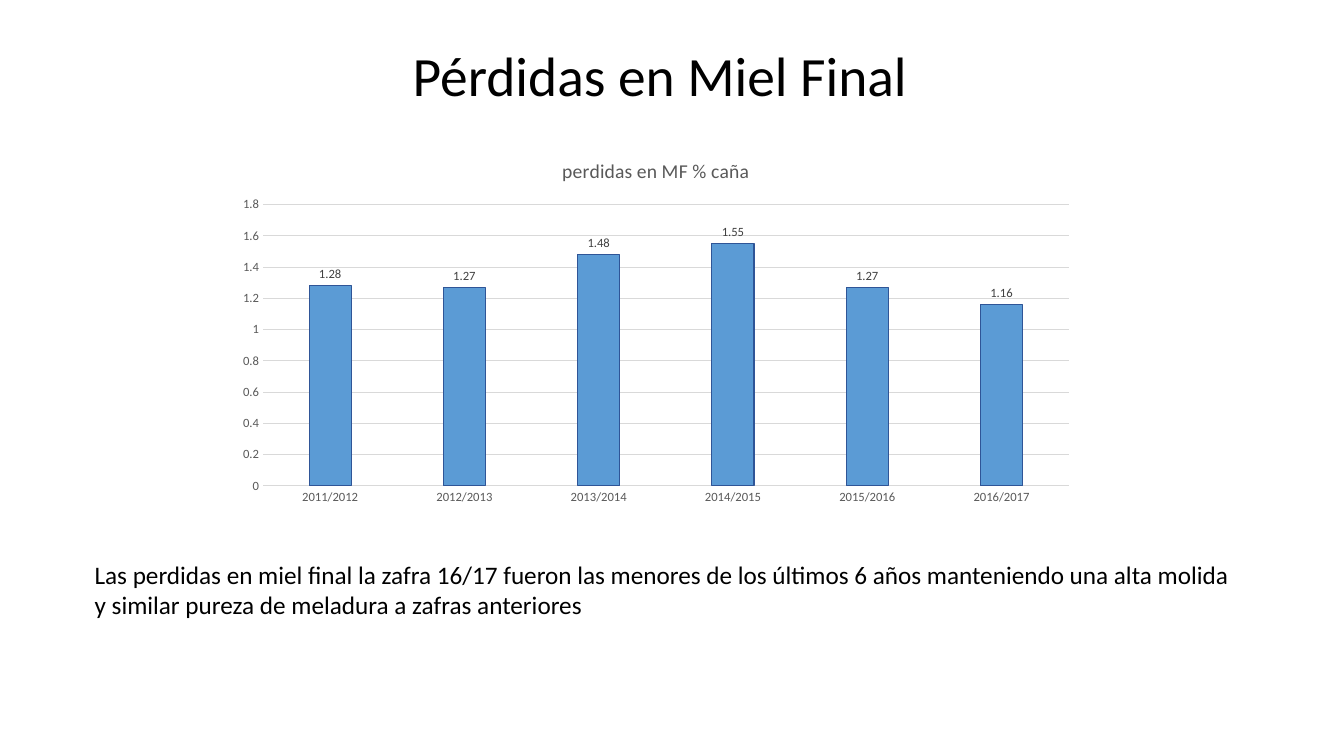
from pptx import Presentation
from pptx.chart.data import CategoryChartData
from pptx.dml.color import RGBColor
from pptx.enum.chart import XL_CHART_TYPE, XL_LABEL_POSITION, XL_TICK_MARK
from pptx.enum.text import MSO_ANCHOR, MSO_AUTO_SIZE, PP_ALIGN
from pptx.util import Inches, Pt

COLUMN_CLUSTERED = XL_CHART_TYPE.COLUMN_CLUSTERED
OUTSIDE_END = XL_LABEL_POSITION.OUTSIDE_END
NO_TICK = XL_TICK_MARK.NONE
MIDDLE = MSO_ANCHOR.MIDDLE
NO_AUTOFIT = MSO_AUTO_SIZE.NONE
GROW = MSO_AUTO_SIZE.SHAPE_TO_FIT_TEXT
CENTER = PP_ALIGN.CENTER

BLACK = RGBColor(0x00, 0x00, 0x00)
GRAY = RGBColor(0x59, 0x59, 0x59)
DARK_GRAY = RGBColor(0x40, 0x40, 0x40)
GRID_GRAY = RGBColor(0xD9, 0xD9, 0xD9)
BAR_BLUE = RGBColor(0x5B, 0x9B, 0xD5)
BORDER_BLUE = RGBColor(0x2F, 0x55, 0x97)

LOSSES = {
    "2011/2012": 1.28,
    "2012/2013": 1.27,
    "2013/2014": 1.48,
    "2014/2015": 1.55,
    "2015/2016": 1.27,
    "2016/2017": 1.16,
}


class SlideBuilder:
    """Hold the style and current slide, and add each kind of element."""

    font_name = "Calibri"
    line_width = Pt(0.75)

    def __init__(self, slide):
        self.slide = slide

    def style_font(self, font, size, color):
        font.name = self.font_name
        font.size = Pt(size)
        font.bold = False
        font.color.rgb = color

    def style_line(self, line, color):
        line.color.rgb = color
        line.width = self.line_width

    def add_title(self, text, left, top, width, height):
        title = self.slide.shapes.title
        title.left, title.top = Inches(left), Inches(top)
        title.width, title.height = Inches(width), Inches(height)
        frame = title.text_frame
        frame.text = text
        frame.auto_size = NO_AUTOFIT
        frame.vertical_anchor = MIDDLE
        frame.margin_right = Inches(0.35)
        paragraph = frame.paragraphs[0]
        paragraph.alignment = CENTER
        paragraph.line_spacing = 0.9
        self.style_font(paragraph.runs[0].font, 39.6, BLACK)

    def add_text(self, text, left, top, width, height):
        shape = self.slide.shapes.add_textbox(
            Inches(left), Inches(top), Inches(width), Inches(height))
        frame = shape.text_frame
        frame.word_wrap = True
        frame.auto_size = GROW
        frame.text = text
        self.style_font(frame.paragraphs[0].runs[0].font, 18, BLACK)

    def add_column_chart(self, name, values, left, top, width, height):
        data = CategoryChartData()
        data.categories = list(values)
        data.add_series(name, list(values.values()))
        chart = self.slide.shapes.add_chart(
            COLUMN_CLUSTERED, Inches(left), Inches(top),
            Inches(width), Inches(height), data).chart
        self.style_font(chart.font, 10, BLACK)
        chart.has_legend = False
        chart.has_title = True
        chart.chart_title.include_in_layout = False
        title_frame = chart.chart_title.text_frame
        title_frame.text = name
        self.style_font(title_frame.paragraphs[0].runs[0].font, 14, GRAY)
        self.style_axes(chart)
        self.style_columns(chart.plots[0])

    def style_axes(self, chart):
        for axis in (chart.category_axis, chart.value_axis):
            axis.major_tick_mark = NO_TICK
            axis.minor_tick_mark = NO_TICK
            self.style_font(axis.tick_labels.font, 9, GRAY)
        self.style_line(chart.category_axis.format.line, GRID_GRAY)
        value_axis = chart.value_axis
        value_axis.minimum_scale = 0
        value_axis.maximum_scale = 1.8
        value_axis.major_unit = 0.2
        value_axis.format.line.fill.background()
        self.style_line(value_axis.major_gridlines.format.line, GRID_GRAY)

    def style_columns(self, plot):
        plot.gap_width = 219
        plot.overlap = -27
        plot.vary_by_categories = False
        series = plot.series[0]
        series.format.fill.solid()
        series.format.fill.fore_color.rgb = BAR_BLUE
        self.style_line(series.format.line, BORDER_BLUE)
        labels = series.data_labels
        labels.show_value = True
        labels.position = OUTSIDE_END
        self.style_font(labels.font, 9, DARK_GRAY)


def main():
    presentation = Presentation()
    presentation.slide_width = Inches(13.33)
    presentation.slide_height = Inches(7.5)
    title_only = presentation.slide_layouts[5]
    builder = SlideBuilder(presentation.slides.add_slide(title_only))
    builder.add_column_chart("perdidas en MF % caña", LOSSES, 2.24, 1.4, 8.53, 3.68)
    builder.add_text(
        "Las perdidas en miel final la zafra 16/17 fueron las menores de los "
        "últimos 6 años manteniendo una alta molida y similar pureza de "
        "meladura a zafras anteriores", 0.84, 5.5, 11.54, 0.71)
    builder.add_title("Pérdidas en Miel Final", 0.92, 0.4, 11.5, 0.75)
    presentation.save("out.pptx")


if __name__ == "__main__":
    main()
